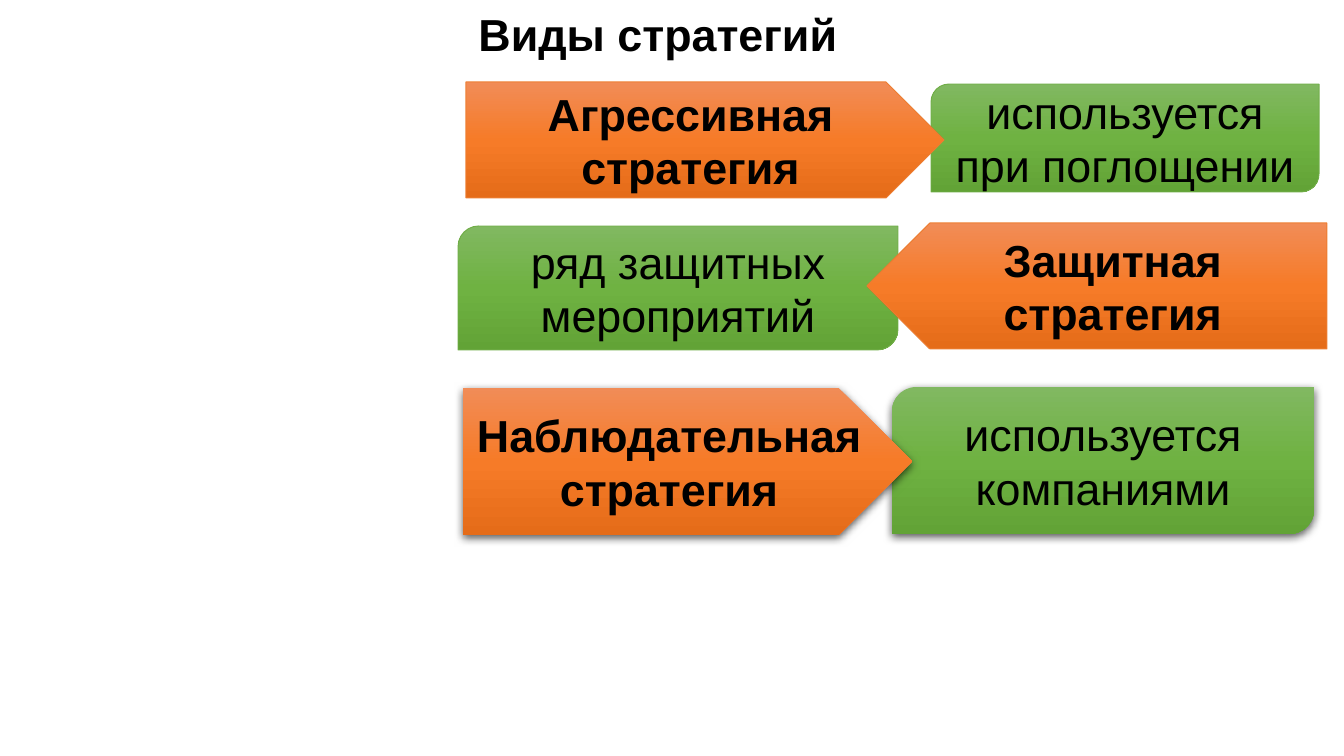
"""Slide with three strategy kinds, each an arrow next to its use."""
import copy
from lxml import etree
from pptx import Presentation
from pptx import util as u
from pptx.dml.color import RGBColor
from pptx.enum import shapes, text
from pptx.oxml.ns import qn

PX = 914400 / 134.4
SIZE = (1344, 756)
TITLE = ("Виды стратегий", (465, 0, 778, 67))
USE = dict(kind=shapes.MSO_SHAPE.ROUND_2_DIAG_RECTANGLE, bold=False,
           stops=("81B861", "6FB242", "62A336"), line="70AD47")
STRATEGY = dict(kind=shapes.MSO_SHAPE.PENTAGON, bold=True,
                stops=("F18C57", "F67B28", "E56C19"), line="ED7D31")
ROWS = [
    dict(use=("используется при поглощении", (931, 84, 388, 108)),
         strategy=("Агрессивная стратегия", (466, 82, 478, 116))),
    dict(use=("ряд защитных мероприятий", (458, 226, 440, 124)),
         strategy=("Защитная стратегия", (867, 223, 460, 126)), flip=True),
    dict(use=("используется компаниями", (892, 387, 422, 147)),
         strategy=("Наблюдательная стратегия", (463, 388, 449, 147)), raised=True),
]


def rgb(value):
    return RGBColor.from_string(value)


def emu(box):
    return [u.Emu(round(v * PX)) for v in box]


def write(sp, words, align, bold, anchor):
    tf = sp.text_frame
    tf.word_wrap = True
    tf.vertical_anchor = anchor
    p = tf.paragraphs[0]
    p.alignment = align
    r = p.add_run()
    r.text = words
    for name, value in dict(name="Arial", size=u.Pt(24), bold=bold).items():
        setattr(r.font, name, value)
    r.font.color.rgb = rgb("000000")


def shade(sp, colours):
    fill = sp.fill
    fill.gradient()
    fill.gradient_angle = 270
    stops = sp._element.spPr.find(qn("a:gradFill")).find(qn("a:gsLst"))
    stops.append(copy.deepcopy(stops[0]))
    for i, (stop, colour) in enumerate(zip(fill.gradient_stops, colours)):
        stop.color.rgb = rgb(colour)
        stop.position = i / 2


def raise_up(sp):
    effects = sp._element.spPr.find(qn("a:effectLst"))
    shadow = etree.SubElement(effects, qn("a:outerShdw"), blurRad=str(u.Pt(4.5)),
                              dist=str(u.Pt(1.5)), dir="5400000", rotWithShape="0")
    colour = etree.SubElement(shadow, qn("a:srgbClr"), val="000000")
    etree.SubElement(colour, qn("a:alpha"), val="63000")


def add_block(s, words, box, style, flip=False, raised=False):
    sp = s.shapes.add_shape(style["kind"], *emu(box))
    sp.shadow.inherit = False
    shade(sp, style["stops"])
    if raised:
        sp.line.fill.background()
        raise_up(sp)
    else:
        sp.line.color.rgb = rgb(style["line"])
        sp.line.width = u.Pt(0.5)
    if flip:
        sp._element.spPr.find(qn("a:xfrm")).set("flipH", "1")
    write(sp, words, text.PP_ALIGN.CENTER, style["bold"], text.MSO_ANCHOR.MIDDLE)


def main():
    prs = Presentation()
    prs.slide_width, prs.slide_height = emu(SIZE)
    s = prs.slides.add_slide(prs.slide_layouts[5])
    words, box = TITLE
    title = s.shapes.title
    title.left, title.top, title.width, title.height = emu(box)
    write(title, words, text.PP_ALIGN.JUSTIFY, True, text.MSO_ANCHOR.TOP)
    title.text_frame.auto_size = text.MSO_AUTO_SIZE.SHAPE_TO_FIT_TEXT
    for row in ROWS:
        raised = row.get("raised", False)
        add_block(s, *row["use"], USE, raised=raised)
        add_block(s, *row["strategy"], STRATEGY, row.get("flip", False), raised)
    prs.save("out.pptx")


if __name__ == "__main__":
    main()
